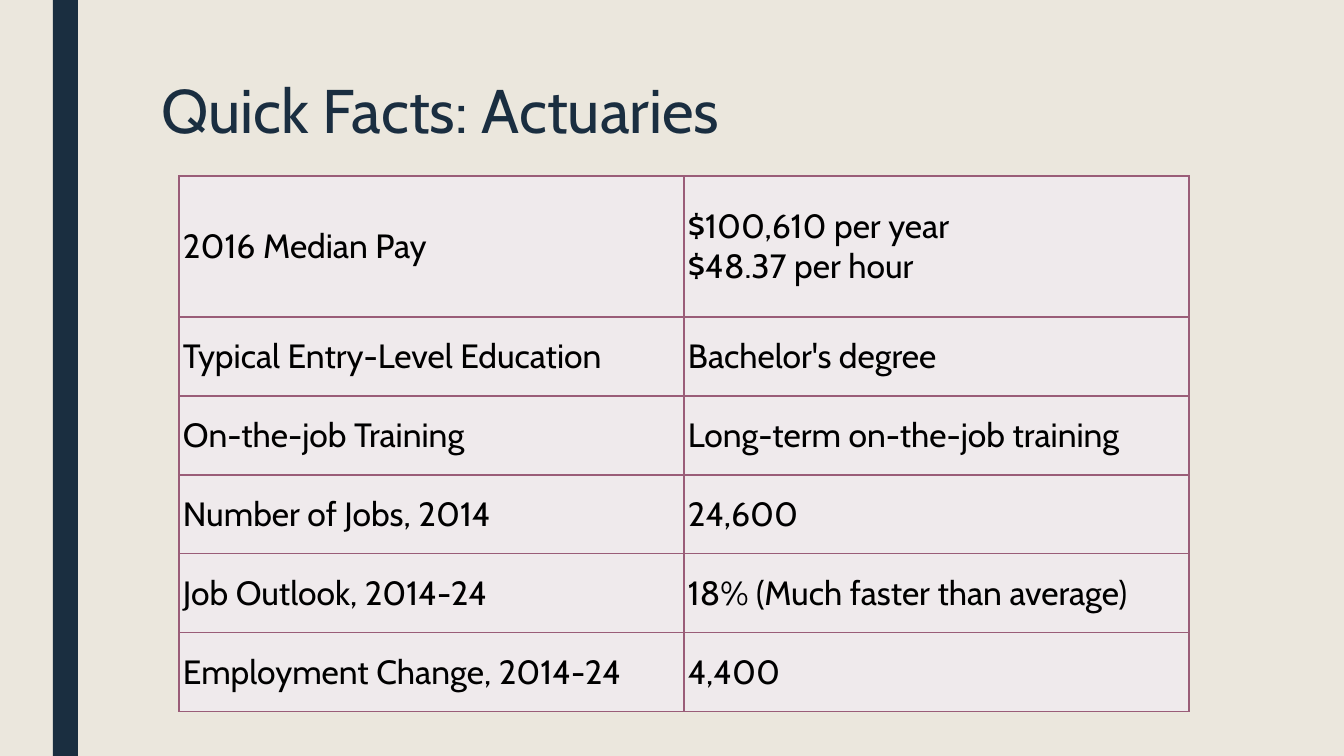
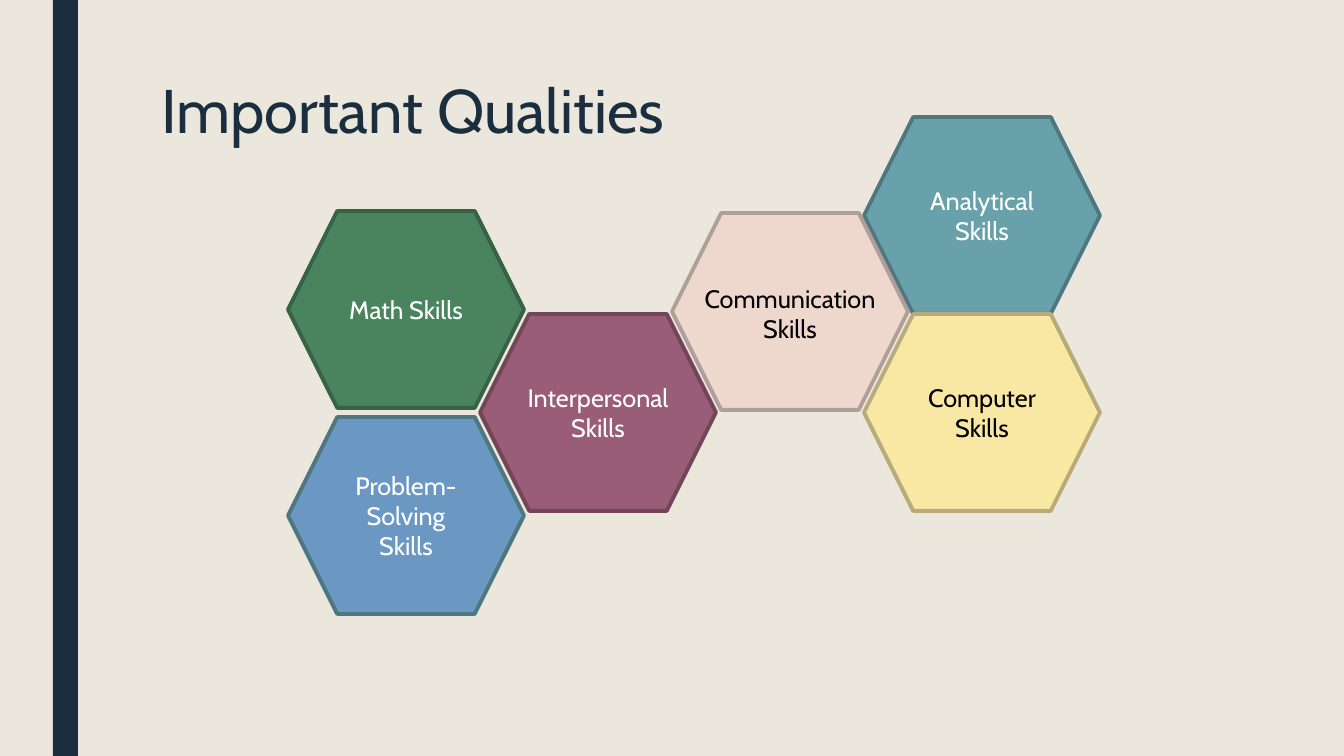
from lxml.etree import SubElement
from pptx import Presentation
from pptx.dml.color import RGBColor
from pptx.enum.shapes import MSO_SHAPE as Shape
from pptx.enum.text import MSO_ANCHOR as Anchor, PP_ALIGN as Align
from pptx.oxml.ns import qn
from pptx.util import Emu, Pt

SLIDE_W, SLIDE_H = 1344, 756
EMU_PER_PX = 12192000 / SLIDE_W
FONT = "Cabin"
NAVY, CREAM, WHITE, BLACK = "1A2E40", "EBE7DD", "FFFFFF", "000000"
PLUM, PALE_PLUM = "9A5D78", "EFEAEC"

TABLE_LEFT, TABLE_TOP, COLUMN_W = 179, 176, 505
FIRST_ROW_H, ROW_H, CELL_INSET = 141, 79, 4
FACTS = [
    ("2016 Median Pay", "$100,610 per year\v$48.37 per hour"),
    ("Typical Entry-Level Education", "Bachelor's degree"),
    ("On-the-job Training", "Long-term on-the-job training"),
    ("Number of Jobs, 2014", "24,600"),
    ("Job Outlook, 2014-24", "18% (Much faster than average)"),
    ("Employment Change, 2014-24", "4,400"),
]

HEX_LEFT, HEX_PITCH, HEX_W, HEX_H = 288, 192, 236, 197
# text, column, top, fill, line, text colour
QUALITIES = [
    ("Interpersonal Skills", 1, 314, PLUM, "724559", WHITE),
    ("Math Skills", 0, 211, "4A845E", "376246", WHITE),
    ("Analytical Skills", 3, 117, "69A1AB", "4E777F", WHITE),
    ("Problem- Solving\nSkills", 0, 417, "6A98C2", "4E777F", WHITE),
    ("Computer Skills", 3, 314, "F9E7A4", "B8AB79", BLACK),
    ("", 2, 213, "EED7CD", "B09F98", BLACK),
]


def px(value):
    return Emu(round(value * EMU_PER_PX))


def box(*lengths):
    """Turn left, top, width and height from px into EMU."""
    return [px(length) for length in lengths]


def color(hex_code):
    return RGBColor.from_string(hex_code)


def paint(item, hex_code):
    item.fill.solid()
    item.fill.fore_color.rgb = color(hex_code)


def write(frame, text, size=18, ink=BLACK, align=Align.LEFT,
          anchor=Anchor.MIDDLE, spacing=None, wrap=True):
    frame.text = text
    frame.word_wrap = wrap
    frame.vertical_anchor = anchor
    for para in frame.paragraphs:
        para.alignment = align
        para.line_spacing = spacing
        for span in para.runs:
            span.font.name = FONT
            span.font.size = Pt(size)
            span.font.color.rgb = color(ink)


def add_filled_shape(page, kind, bounds, fill, line=None):
    shape = page.shapes.add_shape(kind, *box(*bounds))
    shape.shadow.inherit = False
    paint(shape, fill)
    if line:
        shape.line.color.rgb = color(line)
        shape.line.width = Pt(2.75)
    else:
        shape.line.fill.background()
    return shape


def add_page(deck, title_text):
    """Add a title-only page with the side band and the shared title style."""
    page = deck.slides.add_slide(deck.slide_layouts[5])
    add_filled_shape(page, Shape.RECTANGLE, (53, 0, 25, SLIDE_H), NAVY)
    title = page.shapes.title
    title.left, title.top, title.width, title.height = box(151, 76, 1058, 163)
    write(title.text_frame, title_text, size=44, ink=NAVY,
          anchor=Anchor.TOP, spacing=0.89)
    return page


def add_borders(cell, hex_code):
    props = cell._tc.get_or_add_tcPr()
    for index, side in enumerate(("lnL", "lnR", "lnT", "lnB")):
        line = SubElement(props, qn(f"a:{side}"), w=str(Pt(1)))
        fill = SubElement(line, qn("a:solidFill"))
        SubElement(fill, qn("a:srgbClr"), val=hex_code)
        props.insert(index, line)


def format_cell(cell, text):
    write(cell.text_frame, text, size=24)
    cell.vertical_anchor = Anchor.MIDDLE
    cell.margin_left = cell.margin_right = px(CELL_INSET)
    cell.margin_top = cell.margin_bottom = px(CELL_INSET)
    paint(cell, PALE_PLUM)
    add_borders(cell, PLUM)


def add_facts_table(page):
    heights = [FIRST_ROW_H] + [ROW_H] * (len(FACTS) - 1)
    bounds = box(TABLE_LEFT, TABLE_TOP, 2 * COLUMN_W, sum(heights))
    table = page.shapes.add_table(len(FACTS), 2, *bounds).table
    table.first_row = table.horz_banding = False
    for column in table.columns:
        column.width = px(COLUMN_W)
    for row, height, texts in zip(table.rows, heights, FACTS):
        row.height = px(height)
        for cell, text in zip(row.cells, texts):
            format_cell(cell, text)


def add_quality(page, text, column, top, fill, line, ink):
    bounds = (HEX_LEFT + column * HEX_PITCH, top, HEX_W, HEX_H)
    hexagon = add_filled_shape(page, Shape.HEXAGON, bounds, fill, line)
    if text:
        write(hexagon.text_frame, text, ink=ink, align=Align.CENTER)


def add_label(page, text, bounds):
    label = page.shapes.add_textbox(*box(*bounds))
    write(label.text_frame, text, align=Align.CENTER, anchor=Anchor.TOP,
          wrap=False)


def main():
    deck = Presentation()
    deck.slide_width, deck.slide_height = box(SLIDE_W, SLIDE_H)
    paint(deck.slide_master.background, CREAM)

    add_facts_table(add_page(deck, "Quick Facts: Actuaries"))

    qualities_page = add_page(deck, "Important Qualities")
    for quality in QUALITIES:
        add_quality(qualities_page, *quality)
    add_label(qualities_page, "Communication\nSkills", (693, 278, 194, 72))

    deck.save("out.pptx")


if __name__ == "__main__":
    main()
